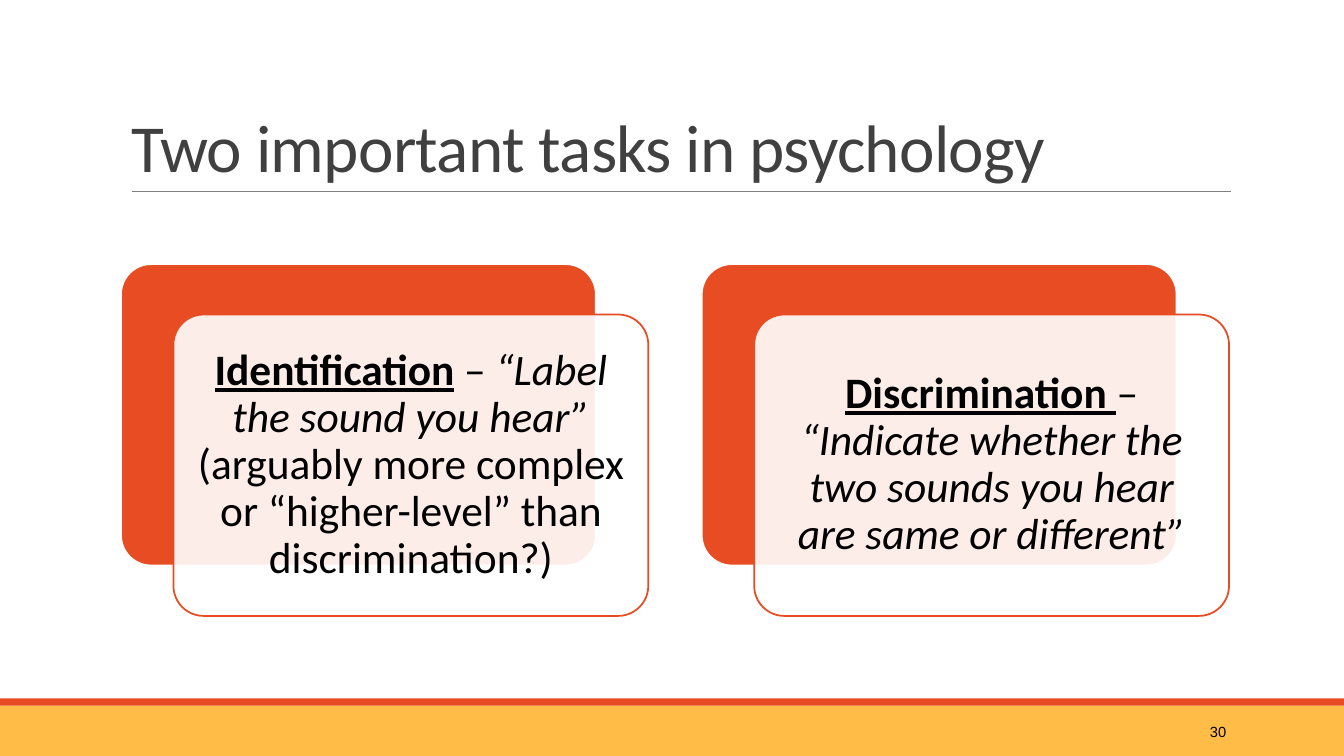
from pptx import Presentation
from pptx import util as u
from pptx.dml.color import RGBColor
from pptx.enum import shapes, text
from pptx.oxml.ns import qn
from lxml import etree

THEME = {
    "orange": RGBColor.from_string("E84C22"),
    "yellow": RGBColor.from_string("FFBD47"),
    "white": RGBColor.from_string("FFFFFF"),
    "gray": RGBColor.from_string("808080"),
    "title": RGBColor.from_string("404040"),
    "black": RGBColor.from_string("000000"),
    "title_size": u.Pt(48),
    "card_size": u.Pt(31),
    "number_size": u.Pt(10.5),
    "heading_font": "Calibri",
    "number_font": "Arial",
}


def add_block(slide, kind, left, top, width, height, fill, line=None):
    block = slide.shapes.add_shape(
        kind, u.Inches(left), u.Inches(top), u.Inches(width), u.Inches(height))
    block.shadow.inherit = False
    block.fill.solid()
    block.fill.fore_color.rgb = THEME[fill]
    if line:
        block.line.color.rgb = THEME[line]
        block.line.width = u.Pt(1.25)
    else:
        block.line.fill.background()
    return block


def add_span(para, words, font, size, color, **styles):
    span = para.add_run()
    span.text = words
    span.font.color.rgb = THEME[color]
    formats = {"name": THEME[font], "size": THEME[size], **styles}
    for name, value in formats.items():
        setattr(span.font, name, value)
    return span


deck = Presentation()
deck.slide_width = u.Inches(13.33)
deck.slide_height = u.Inches(7.5)
page = deck.slides.add_slide(deck.slide_layouts[5])

add_block(page, shapes.MSO_SHAPE.RECTANGLE, 0, 7, 13.33, 0.5, "yellow")
add_block(page, shapes.MSO_SHAPE.RECTANGLE, 0, 6.93, 13.33, 0.07, "orange")

rule = page.shapes.add_connector(
    shapes.MSO_CONNECTOR.STRAIGHT,
    u.Inches(1.31), u.Inches(1.9), u.Inches(12.21), u.Inches(1.9))
rule.line.color.rgb = THEME["gray"]
rule.line.width = u.Pt(0.5)
etree.SubElement(rule._element.spPr, qn("a:effectLst"))

title = page.shapes.title
title_place = {"left": 1.2, "top": 0.31, "width": 11, "height": 1.59}
for name, value in title_place.items():
    setattr(title, name, u.Inches(value))
title.text_frame.auto_size = text.MSO_AUTO_SIZE.NONE
title.text_frame.vertical_anchor = text.MSO_ANCHOR.BOTTOM
para = title.text_frame.paragraphs[0]
para.alignment = text.PP_ALIGN.LEFT
para.line_spacing = 0.85
span = add_span(para, "Two important tasks in psychology",
                "heading_font", "title_size", "title")
span.font._element.set("spc", "-50")

number = page.shapes.add_textbox(
    u.Inches(10.83), u.Inches(7.06), u.Inches(1.43), u.Inches(0.4))
number.text_frame.word_wrap = True
number.text_frame.vertical_anchor = text.MSO_ANCHOR.MIDDLE
para = number.text_frame.paragraphs[0]
para.alignment = text.PP_ALIGN.RIGHT
add_span(para, "30", "number_font", "number_size", "black")

CARD_TOP, CARD_WIDTH, CARD_HEIGHT = 2.62, 4.71, 2.99
CARD_LEFT, CARD_STEP = 1.2, 5.76
SHIFT_X, SHIFT_Y = 0.52, 0.5
HEADING = {"bold": True, "underline": True}
QUOTE = {"italic": True}
CARDS = [
    [
        ("Identification", HEADING),
        (" – ", {}),
        ("“Label the sound you hear” ", QUOTE),
        ("(arguably more complex or “higher-level” than discrimination?)", {}),
    ],
    [
        ("Discrimination", HEADING),
        (" ", {"underline": True}),
        ("– ", {}),
        ("“Indicate whether the two sounds you hear are same or different”", QUOTE),
    ],
]

for index, spans in enumerate(CARDS):
    left = CARD_LEFT + index * CARD_STEP
    back = add_block(page, shapes.MSO_SHAPE.ROUNDED_RECTANGLE, left, CARD_TOP,
                     CARD_WIDTH, CARD_HEIGHT, "orange", "white")
    front = add_block(page, shapes.MSO_SHAPE.ROUNDED_RECTANGLE,
                      left + SHIFT_X, CARD_TOP + SHIFT_Y,
                      CARD_WIDTH, CARD_HEIGHT, "white", "orange")
    for card in (back, front):
        card.adjustments[0] = 0.1
    color = front.fill._xPr.find(qn("a:solidFill"))[0]
    etree.SubElement(color, qn("a:alpha"), val="90000")

    frame = front.text_frame
    frame.word_wrap = True
    frame.vertical_anchor = text.MSO_ANCHOR.MIDDLE
    for side in ("left", "top", "right", "bottom"):
        setattr(frame, f"margin_{side}", u.Inches(0.13))
    para = frame.paragraphs[0]
    para.alignment = text.PP_ALIGN.CENTER
    para.line_spacing = 0.9
    for words, styles in spans:
        add_span(para, words, "heading_font", "card_size", "black", **styles)

deck.save("out.pptx")
